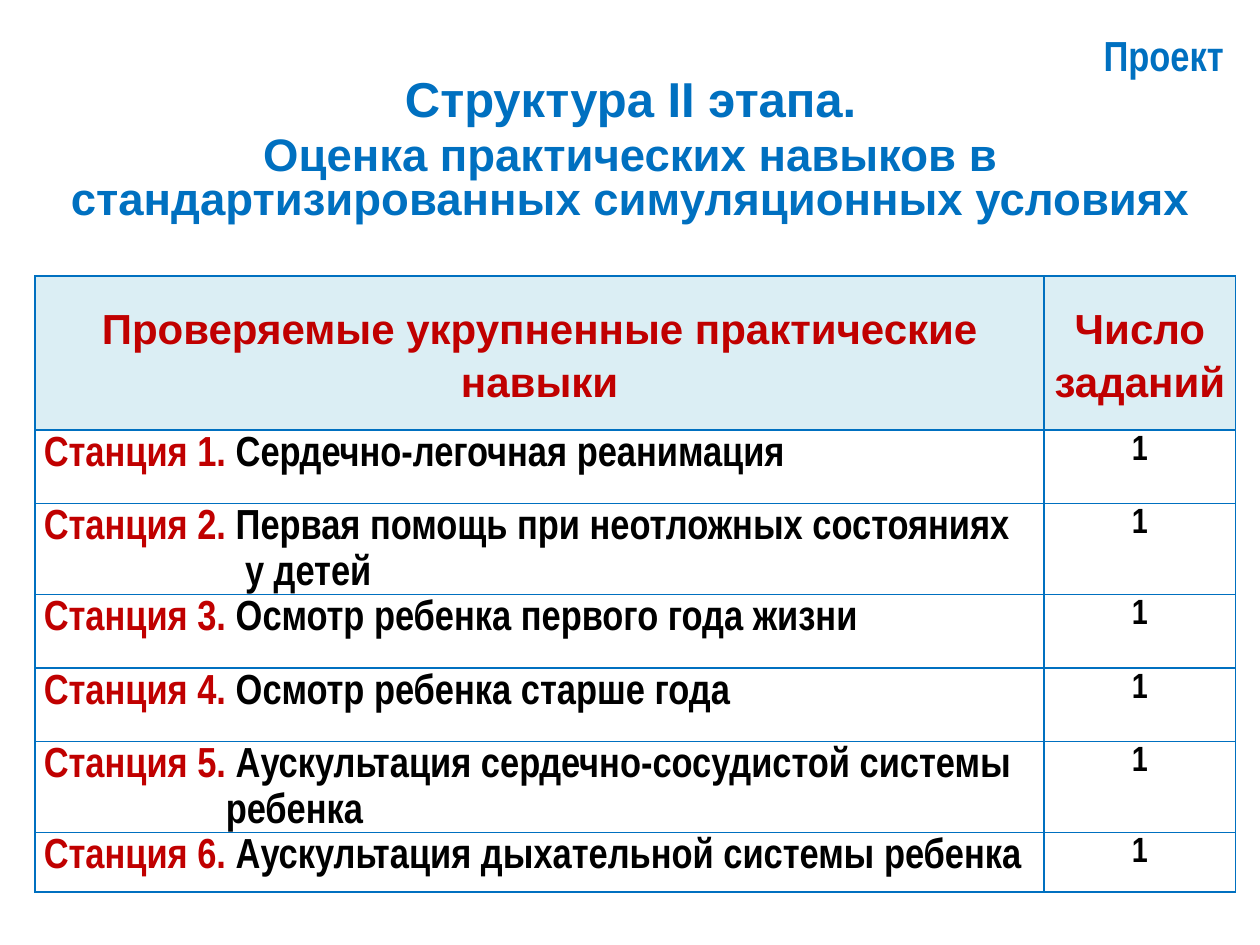
from dataclasses import dataclass

import lxml.etree
import pptx
import pptx.dml.color
import pptx.enum.text
import pptx.oxml.ns
import pptx.table
import pptx.text.text
import pptx.util

Pt = pptx.util.Pt
RGBColor = pptx.dml.color.RGBColor
ALIGN = pptx.enum.text.PP_ALIGN
ANCHOR = pptx.enum.text.MSO_ANCHOR
qn = pptx.oxml.ns.qn

BLUE = RGBColor(0x00, 0x70, 0xC0)
RED = RGBColor(0xC0, 0x00, 0x00)
BLACK = RGBColor(0x00, 0x00, 0x00)
PALE = RGBColor(0xDB, 0xEE, 0xF4)
WIDE = "Arial"
SLIM = "Arial Narrow"


@dataclass(frozen=True)
class Style:
    font: str
    size: float
    color: RGBColor


@dataclass(frozen=True)
class Title:
    text: str
    style: Style
    align: ALIGN
    after: float


@dataclass(frozen=True)
class Station:
    skill: str
    height: float
    rest: str = ""
    indent: float = 0
    count: int = 1


HEAD = Style(WIDE, 24, RED)
LABEL = Style(SLIM, 24, RED)
SKILL = Style(SLIM, 24, BLACK)
COUNT = Style(SLIM, 20, BLACK)

TITLES = [
    Title("Проект", Style(SLIM, 24, BLUE), ALIGN.RIGHT, 0),
    Title("Структура II этапа.", Style(WIDE, 28, BLUE), ALIGN.CENTER, 6),
    Title(
        "Оценка практических навыков в стандартизированных симуляционных условиях",
        Style(WIDE, 26, BLUE), ALIGN.CENTER, 6,
    ),
]
HEADERS = ["Проверяемые укрупненные практические навыки", "Число заданий"]
WIDTHS = [576.7, 109.4]
HEIGHT = 88
STATIONS = [
    Station("Сердечно-легочная реанимация", 42),
    Station("Первая помощь при неотложных состояниях", 52, "у детей", 115),
    Station("Осмотр ребенка первого года жизни", 42),
    Station("Осмотр ребенка старше года", 42),
    Station("Аускультация сердечно-сосудистой системы", 52, "ребенка", 104),
    Station("Аускультация дыхательной системы ребенка", 34),
]


def format_run(run: pptx.text.text._Run, style: Style) -> None:
    run.font.name = style.font
    run.font.size = Pt(style.size)
    run.font.bold = True
    run.font.color.rgb = style.color


def add_run(para: pptx.text.text._Paragraph, text: str, style: Style) -> None:
    run = para.add_run()
    run.text = text
    format_run(run, style)


def set_cell(cell: pptx.table._Cell, text: str, style: Style, align: ALIGN) -> None:
    cell.text_frame.text = text
    para = cell.text_frame.paragraphs[0]
    para.alignment = align
    para.line_spacing = 1.15
    format_run(para.runs[0], style)
    cell.margin_left = cell.margin_right = Pt(5)
    cell.margin_top = cell.margin_bottom = Pt(0)
    cell.fill.background()


def add_border(cell: pptx.table._Cell) -> None:
    props = cell._tc.get_or_add_tcPr()
    for place, side in enumerate(("a:lnL", "a:lnR", "a:lnT", "a:lnB")):
        line = lxml.etree.Element(qn(side), w=str(Pt(1)))
        fill = lxml.etree.SubElement(line, qn("a:solidFill"))
        lxml.etree.SubElement(fill, qn("a:srgbClr"), val=str(BLUE))
        props.insert(place, line)


def draw_title(slide: pptx.slide.Slide) -> None:
    frame = slide.shapes.add_textbox(Pt(14.4), Pt(18), Pt(692), Pt(114.5)).text_frame
    frame.word_wrap = True
    frame.auto_size = pptx.enum.text.MSO_AUTO_SIZE.SHAPE_TO_FIT_TEXT
    frame.vertical_anchor = ANCHOR.MIDDLE
    frame.text = "\n".join(title.text for title in TITLES)
    for para, title in zip(frame.paragraphs, TITLES):
        para.alignment = title.align
        para.line_spacing = 0.8
        para.space_after = Pt(title.after)
        format_run(para.runs[0], title.style)


def draw_row(table: pptx.table.Table, row: int, item: Station) -> None:
    table.rows[row].height = Pt(item.height)
    cell = table.cell(row, 0)
    set_cell(cell, f"Станция {row}. ", LABEL, ALIGN.LEFT)
    add_run(cell.text_frame.paragraphs[0], item.skill, SKILL)
    if item.rest:
        para = cell.text_frame.add_paragraph()
        para.line_spacing = 1.15
        para._p.get_or_add_pPr().set("marL", str(Pt(item.indent)))
        add_run(para, item.rest, SKILL)
    set_cell(table.cell(row, 1), str(item.count), COUNT, ALIGN.CENTER)


def draw_table(slide: pptx.slide.Slide) -> None:
    total = HEIGHT + sum(item.height for item in STATIONS)
    table = slide.shapes.add_table(
        len(STATIONS) + 1, len(WIDTHS),
        Pt(20), Pt(157.7), Pt(sum(WIDTHS)), Pt(total),
    ).table
    table.first_row = table.horz_banding = False
    table.rows[0].height = Pt(HEIGHT)
    for col, (text, width) in enumerate(zip(HEADERS, WIDTHS)):
        table.columns[col].width = Pt(width)
        cell = table.cell(0, col)
        set_cell(cell, text, HEAD, ALIGN.CENTER)
        cell.vertical_anchor = ANCHOR.MIDDLE
        cell.fill.solid()
        cell.fill.fore_color.rgb = PALE
    for row, item in enumerate(STATIONS, 1):
        draw_row(table, row, item)
    for cell in table.iter_cells():
        add_border(cell)


def main() -> None:
    deck = pptx.Presentation()
    deck.slide_width, deck.slide_height = Pt(720), Pt(540)
    slide = deck.slides.add_slide(deck.slide_layouts[6])
    draw_table(slide)
    draw_title(slide)
    deck.save("out.pptx")


if __name__ == "__main__":
    main()
